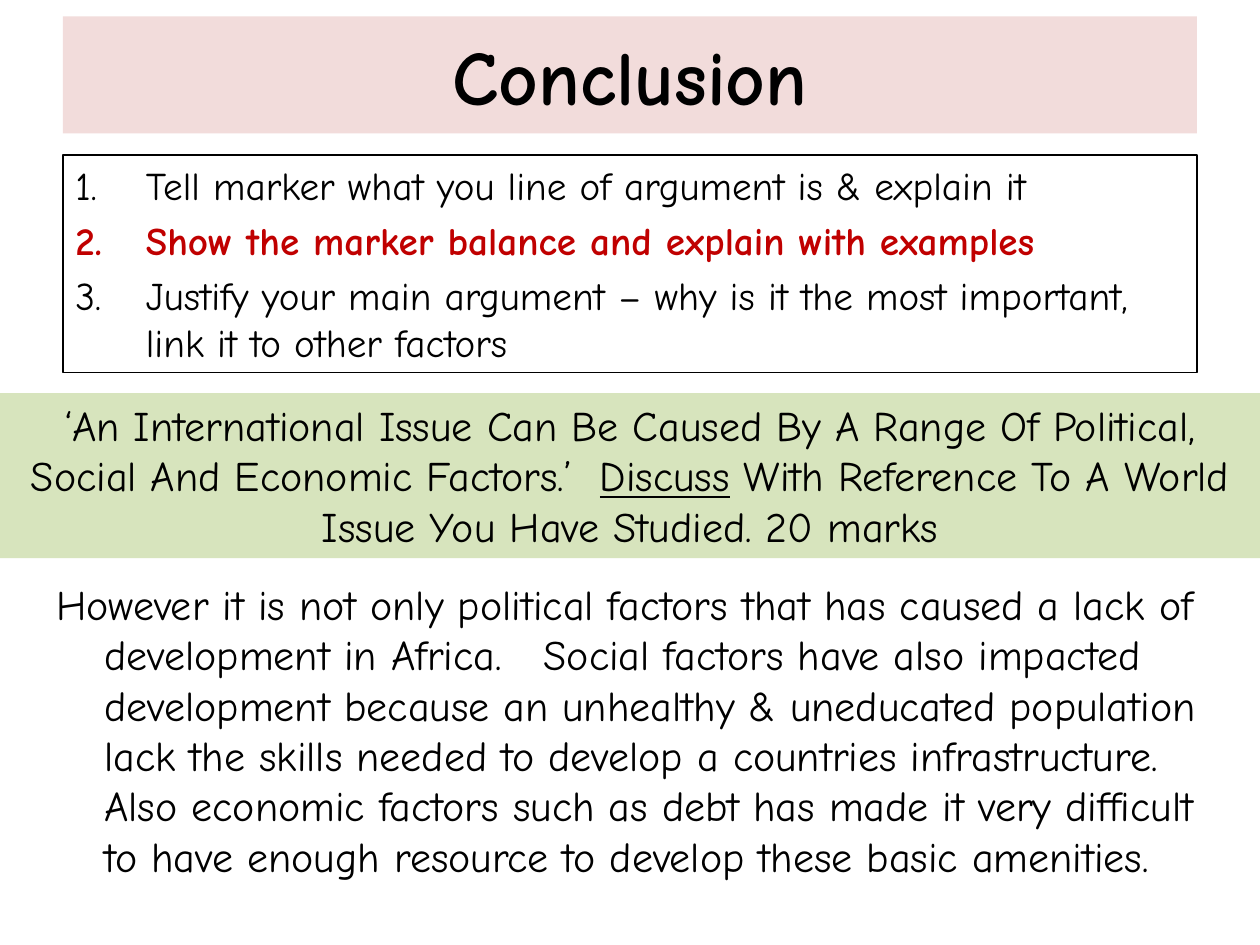
import pptx
import pptx.dml.color
import pptx.enum.shapes
import pptx.enum.text
import pptx.oxml
import pptx.util
from lxml import etree

RGBColor = pptx.dml.color.RGBColor
ALIGN = pptx.enum.text.PP_ALIGN
ANCHOR = pptx.enum.text.MSO_ANCHOR
Inches = pptx.util.Inches
Pt = pptx.util.Pt

BLACK = RGBColor(0x00, 0x00, 0x00)
WHITE = RGBColor(0xFF, 0xFF, 0xFF)
RED = RGBColor(0xC0, 0x00, 0x00)
PINK = RGBColor(0xF2, 0xDC, 0xDB)
GREEN = RGBColor(0xD7, 0xE4, 0xBD)
FONT = "Comic Neue"

# Content: each paragraph is a list of (text, style) runs
HEADING = [[("Conclusion", {"bold": True})]]
STEPS = [
    [("Tell marker what you line of argument is & explain it", {})],
    [("Show the marker balance and explain with examples", {"bold": True, "color": RED})],
    [("Justify your main argument – why is it the most important, "
      "link it to other factors", {})],
]
QUESTION = [[
    ("‘An International Issue Can Be Caused By A Range Of Political, "
     "Social And Economic Factors.’  ", {}),
    ("Discuss", {"underline": True}),
    (" With Reference To A World Issue You Have Studied. 20 marks", {}),
]]
ANSWER = [[
    ("However it is not only political factors that has caused a lack of "
     "development in Africa.   Social factors have also impacted development "
     "because an unhealthy & uneducated population lack the skills needed to "
     "develop a countries infrastructure.  Also economic factors such as debt "
     "has made it very difficult to have enough resource to develop these "
     "basic amenities.", {}),
]]

# Layout in inches
WIDTH, HEIGHT = 10, 7.5
MARGIN = 0.05 * WIDTH
INNER = WIDTH - 2 * MARGIN

deck = pptx.Presentation()
deck.slide_width, deck.slide_height = Inches(WIDTH), Inches(HEIGHT)
slide = deck.slides.add_slide(deck.slide_layouts[6])


def add_panel(paragraphs, box, size, fill=None, border=None, align=ALIGN.LEFT,
              anchor=ANCHOR.TOP, hanging=0, numbered=False):
    """Add a rectangle holding the paragraphs."""
    panel = slide.shapes.add_shape(
        pptx.enum.shapes.MSO_SHAPE.RECTANGLE, *(Inches(v) for v in box))
    panel.shadow.inherit = False
    if fill is None:
        panel.fill.background()
    else:
        panel.fill.solid()
        panel.fill.fore_color.rgb = fill
    if border is None:
        panel.line.fill.background()
    else:
        panel.line.color.rgb = border
        panel.line.width = Pt(0.75)

    frame = panel.text_frame
    frame.word_wrap = True
    frame.vertical_anchor = anchor
    for index, runs in enumerate(paragraphs):
        paragraph = frame.paragraphs[0] if index == 0 else frame.add_paragraph()
        paragraph.alignment = align
        if numbered:
            paragraph.space_before = Pt(0.2 * size)
        if hanging:
            properties = paragraph._p.get_or_add_pPr()
            properties.set("marL", str(Inches(hanging)))
            properties.set("indent", str(-Inches(hanging)))
            if numbered:
                etree.SubElement(properties, pptx.oxml.ns.qn("a:buAutoNum"),
                                 type="arabicPeriod")
        for text, style in runs:
            run = paragraph.add_run()
            run.text = text
            run.font.name = FONT
            run.font.size = Pt(size)
            run.font.bold = style.get("bold", False)
            run.font.underline = style.get("underline", False)
            run.font.color.rgb = style.get("color", BLACK)


# Numbered steps, sample answer, heading band, essay question band
add_panel(STEPS, (MARGIN, 1.23, INNER, 1.73), 22.4, border=BLACK,
          hanging=0.56, numbered=True)
add_panel(ANSWER, (0.35, 4.54, 9.29, 2.93), 24, fill=WHITE, hanging=0.38)
add_panel(HEADING, (MARGIN, 0.13, INNER, 0.93), 44, fill=PINK,
          align=ALIGN.CENTER, anchor=ANCHOR.MIDDLE)
add_panel(QUESTION, (0, 3.12, WIDTH, 1.31), 24, fill=GREEN, align=ALIGN.CENTER)

deck.save("out.pptx")
